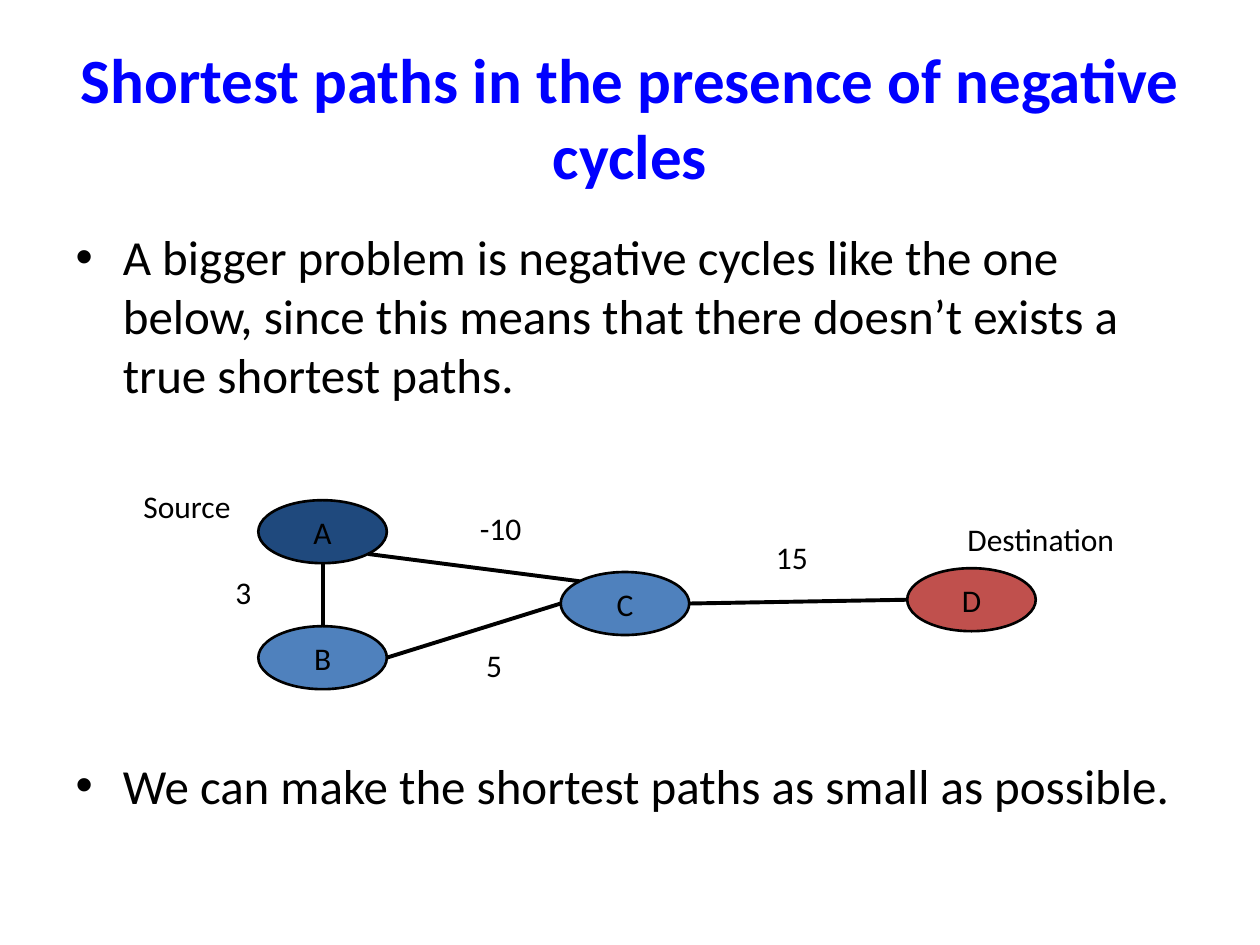
"""Build a slide on shortest paths in a graph with a negative cycle."""
from lxml.etree import SubElement
from pptx import Presentation
from pptx.dml.color import RGBColor
from pptx.enum.shapes import MSO_CONNECTOR, MSO_SHAPE
from pptx.enum.text import MSO_ANCHOR, MSO_AUTO_SIZE, PP_ALIGN
from pptx.oxml.ns import qn
from pptx.util import Inches, Pt

COLORS = {
    "title": "0000FF",
    "text": "000000",
    "line": "000000",
    "source": "1F497D",
    "node": "4F81BD",
    "destination": "C0504D",
}
NODE_WIDTH, NODE_HEIGHT = 1.02, 0.5
DIAGONAL = 0.5 ** 0.5
SITES = {
    "top": (0, 0, -1),
    "top left": (1, -DIAGONAL, -DIAGONAL),
    "left": (2, -1, 0),
    "bottom": (4, 0, 1),
    "bottom right": (5, DIAGONAL, DIAGONAL),
    "right": (6, 1, 0),
}


def write(paragraph, text, size=18, color="text", bold=False, align=None, before=None):
    """Put one formatted run into a paragraph."""
    run = paragraph.add_run()
    run.text = text
    run.font.name = "Calibri"
    run.font.size = Pt(size)
    run.font.bold = bold
    run.font.color.rgb = RGBColor.from_string(COLORS[color])
    if align is not None:
        paragraph.alignment = align
    if before is not None:
        paragraph.space_before = Pt(before)


def site_point(node, site):
    """Return the index and position of a connection site on an ellipse."""
    index, across, down = SITES[site]
    x = node.left + node.width / 2 * (1 + across)
    y = node.top + node.height / 2 * (1 + down)
    return index, round(x), round(y)


presentation = Presentation()
presentation.slide_width, presentation.slide_height = Inches(10), Inches(7.5)
slide = presentation.slides.add_slide(presentation.slide_layouts[1])

title = slide.shapes.title
title.left, title.top = Inches(0.5), Inches(0.3)
title.width, title.height = Inches(9), Inches(1.25)
title.text_frame.auto_size = MSO_AUTO_SIZE.NONE
title.text_frame.vertical_anchor = MSO_ANCHOR.MIDDLE
write(title.text_frame.paragraphs[0], "Shortest paths in the presence of negative cycles",
      size=36, color="title", bold=True, align=PP_ALIGN.CENTER)

body = slide.placeholders[1]
body.left, body.top = Inches(0.5), Inches(1.75)
body.width, body.height = Inches(9), Inches(5.52)
body.text_frame.auto_size = MSO_AUTO_SIZE.NONE
write(body.text_frame.paragraphs[0],
      "A bigger problem is negative cycles like the one below, since this means "
      "that there doesn’t exists a true shortest paths.", size=28)
write(body.text_frame.add_paragraph(),
      "We can make the shortest paths as small as possible.", size=28, before=201)

nodes = {}
for name, left, top, fill in [
    ("D", 7.2, 4.51, "destination"),
    ("A", 2.05, 3.97, "source"),
    ("B", 2.05, 4.97, "node"),
    ("C", 4.45, 4.54, "node"),
]:
    node = slide.shapes.add_shape(MSO_SHAPE.OVAL, Inches(left), Inches(top),
                                  Inches(NODE_WIDTH), Inches(NODE_HEIGHT))
    node.shadow.inherit = False
    node.fill.solid()
    node.fill.fore_color.rgb = RGBColor.from_string(COLORS[fill])
    node.line.color.rgb = RGBColor.from_string(COLORS["line"])
    node.line.width = Pt(1.5)
    node.text_frame.word_wrap = False
    node.text_frame.vertical_anchor = MSO_ANCHOR.MIDDLE
    write(node.text_frame.paragraphs[0], name, align=PP_ALIGN.CENTER)
    nodes[name] = node

for start, start_site, end, end_site in [
    ("C", "top left", "A", "bottom right"),
    ("B", "top", "A", "bottom"),
    ("D", "left", "C", "right"),
    ("C", "left", "B", "right"),
]:
    start_index, start_x, start_y = site_point(nodes[start], start_site)
    end_index, end_x, end_y = site_point(nodes[end], end_site)
    edge = slide.shapes.add_connector(MSO_CONNECTOR.STRAIGHT, start_x, start_y, end_x, end_y)
    edge.line.color.rgb = RGBColor.from_string(COLORS["line"])
    edge.line.width = Pt(2.25)
    SubElement(edge._element.spPr, qn("a:effectLst"))
    joints = edge._element.nvCxnSpPr.cNvCxnSpPr
    for tag, name, index in [("a:stCxn", start, start_index), ("a:endCxn", end, end_index)]:
        SubElement(joints, qn(tag), id=str(nodes[name].shape_id), idx=str(index))

for text, left, top, width in [
    ("-10", 3.71, 3.99, 0.54),
    ("5", 3.76, 5.08, 0.33),
    ("15", 6.06, 4.22, 0.46),
    ("3", 1.77, 4.5, 0.33),
    ("Source", 1.04, 3.82, 0.9),
    ("Destination", 7.58, 4.08, 1.38),
]:
    label = slide.shapes.add_textbox(Inches(left), Inches(top), Inches(width), Inches(0.4))
    label.text_frame.word_wrap = False
    label.text_frame.auto_size = MSO_AUTO_SIZE.SHAPE_TO_FIT_TEXT
    write(label.text_frame.paragraphs[0], text)

presentation.save("out.pptx")
